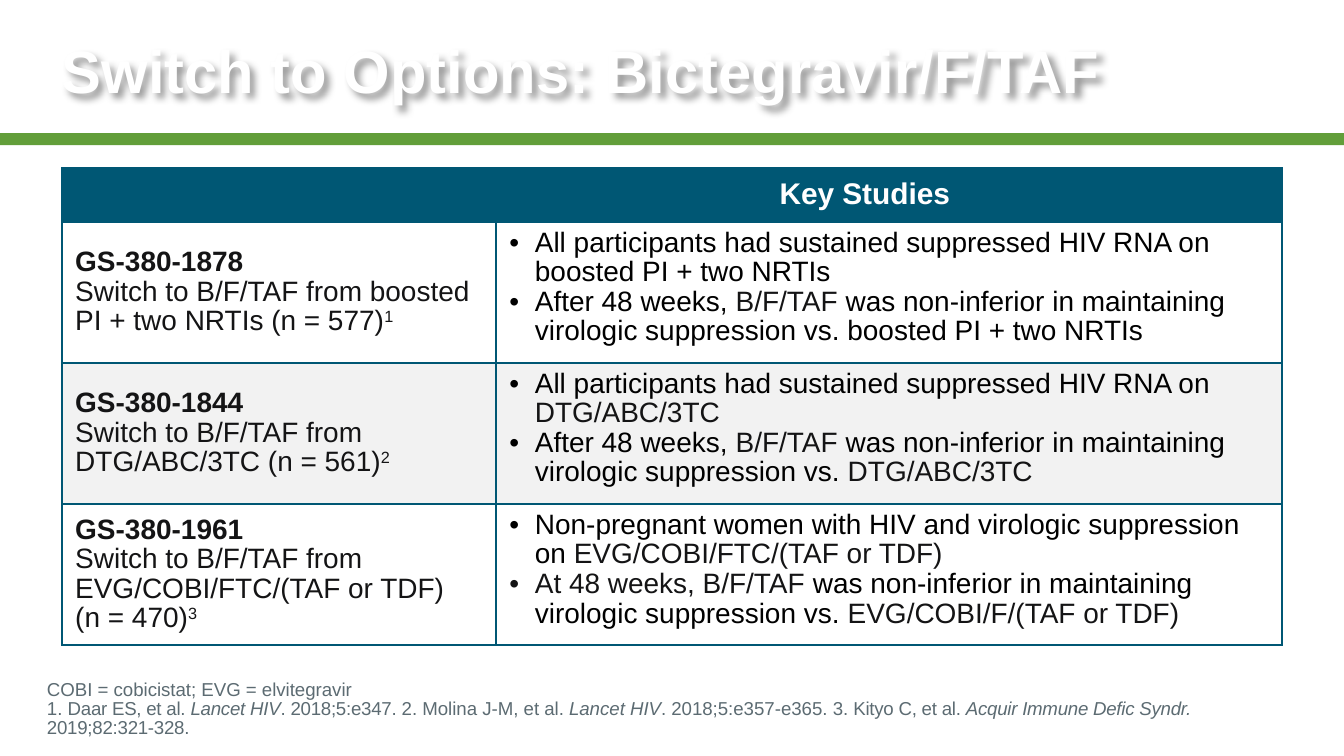
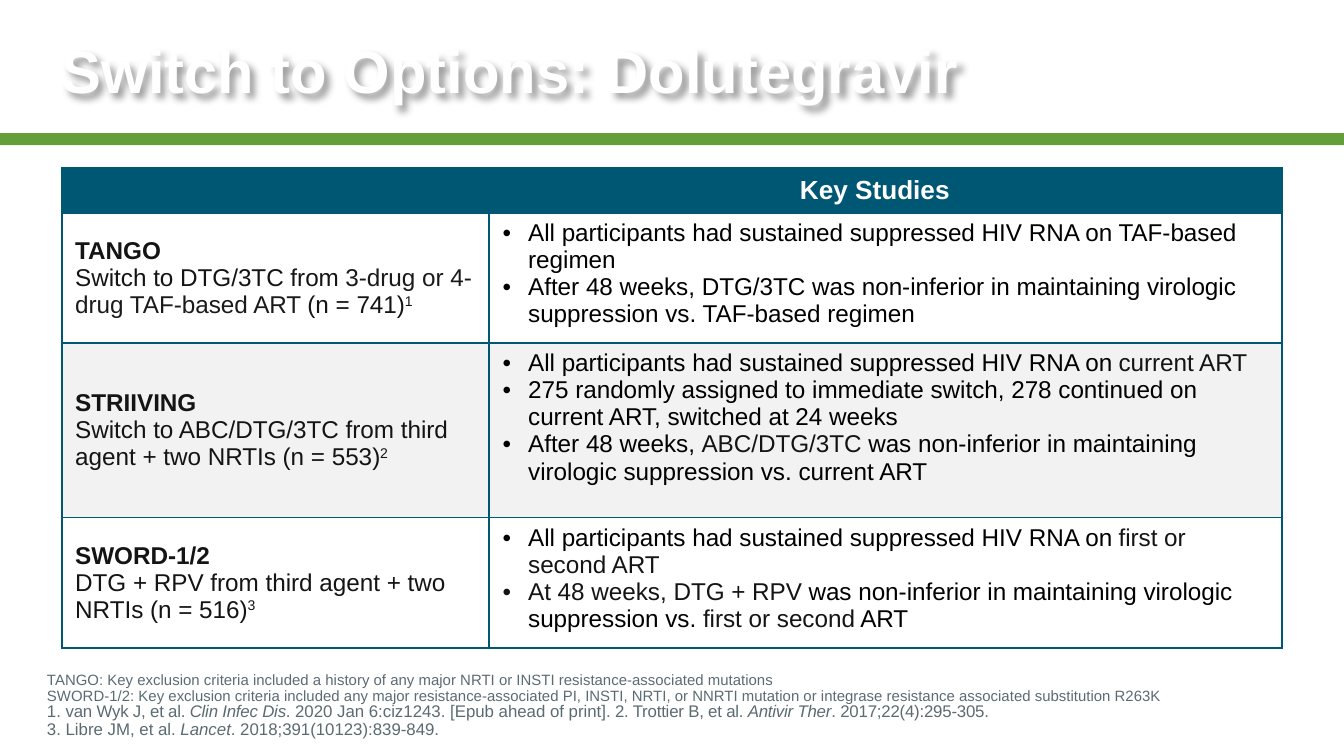
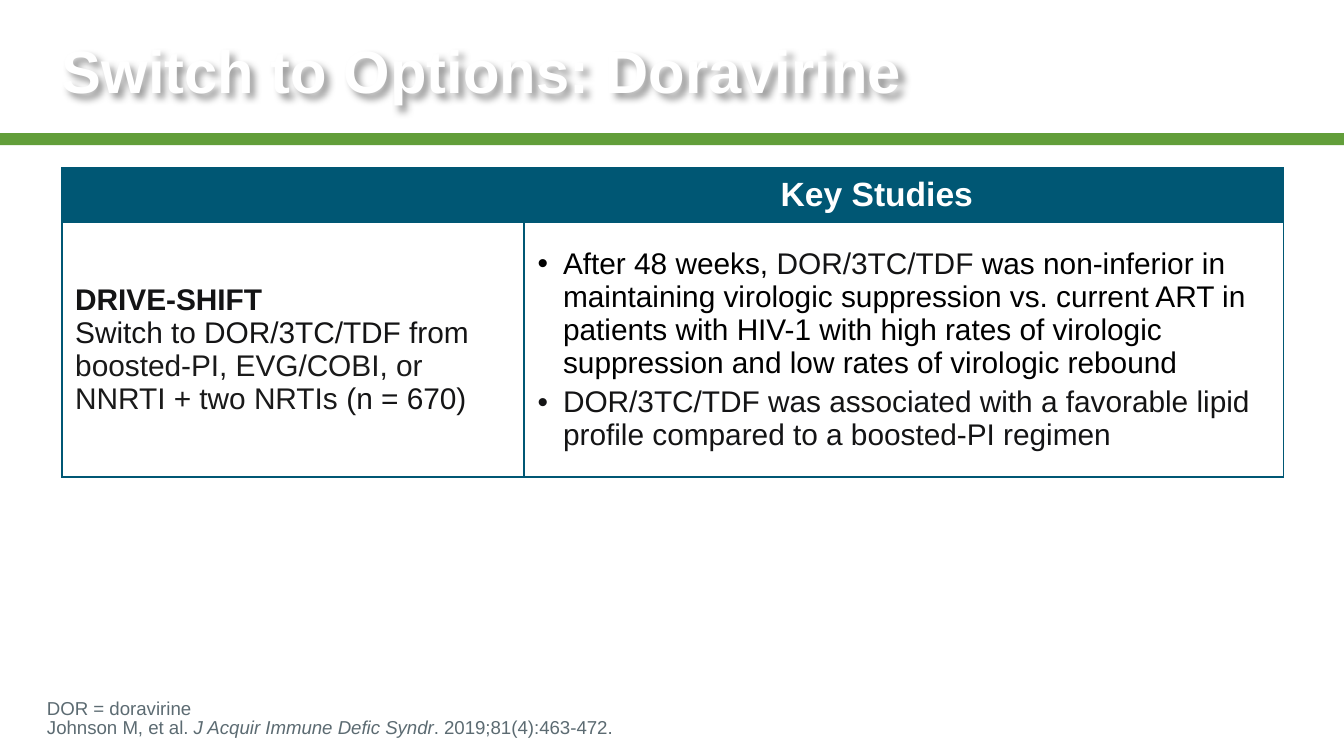
from dataclasses import dataclass

from lxml import etree
from pptx import Presentation
from pptx.dml.color import RGBColor
from pptx.enum import shapes, text
from pptx.oxml import ns
from pptx.util import Inches, Pt

FONT = "Arial"
WHITE, BLACK, INK, SOFT_INK = "FFFFFF", "000000", "141415", "1A1A1A"
TEAL, GREEN, STRIPE, SLATE = "005774", "629E3A", "F2F2F2", "5C6B72"
LEFT, CONTENT_WIDTH = 0.46, 9.09
SLIDE_WIDTH = 10
SLIDE_HEIGHT = SLIDE_WIDTH * 9 / 16
HANG = 0.19


@dataclass
class Study:
    name: str
    design: str
    reference: str
    findings: list[str]
    height: float


@dataclass
class NoteLine:
    size: float
    marked: str


@dataclass
class Regimen:
    title: str
    studies: list[Study]
    notes: list[NoteLine]
    note_height: float
    columns: tuple[float, float]
    header_height: float
    header_inset: float
    header_size: float
    body_size: float
    line_spacing: float = 1.0
    findings_anchor: text.MSO_ANCHOR = text.MSO_ANCHOR.TOP
    findings_gap: float = 0


REGIMENS = [
    Regimen(
        "Switch to Options: Bictegravir/F/TAF",
        [
            Study("GS-380-1878",
                  "Switch to B/F/TAF from boosted PI + two NRTIs (n = 577)", "1",
                  ["All participants had sustained suppressed HIV RNA on boosted PI + two NRTIs",
                   "After 48 weeks, |B/F/TAF |was non-inferior in maintaining virologic "
                   "suppression vs. boosted PI + two NRTIs"], 0.98),
            Study("GS-380-1844",
                  "Switch to B/F/TAF from DTG/ABC/3TC (n = 561)", "2",
                  ["All participants had sustained suppressed HIV RNA on |DTG/ABC/3TC",
                   "After 48 weeks, |B/F/TAF |was non-inferior in maintaining virologic "
                   "suppression vs. |DTG/ABC/3TC"], 0.98),
            Study("GS-380-1961",
                  "Switch to B/F/TAF from EVG/COBI/FTC/(TAF or TDF)\n(n = 470)", "3",
                  ["Non-pregnant women with HIV and virologic suppression on "
                   "|EVG/COBI/FTC/(TAF or TDF)",
                   "|At 48 weeks, B/F/TAF |was non-inferior in maintaining virologic "
                   "suppression vs. |EVG/COBI/F/(TAF or TDF)"], 0.98),
        ],
        [
            NoteLine(10, "COBI = cobicistat; EVG = elvitegravir"),
            NoteLine(10, "1. ~Daar ES, et al. |Lancet HIV|. 2018;5:e347. ~2. Molina J-M, et al. "
                         "|Lancet HIV|. 2018;5:e357-e365. 3. ~Kityo C, et al. "
                         "|Acquir Immune Defic Syndr."),
            NoteLine(10, "~2019;82:321-328."),
        ],
        note_height=0.56, columns=(3.23, 5.85), header_height=0.4, header_inset=2.97,
        header_size=16, body_size=15, line_spacing=0.95,
    ),
    Regimen(
        "Switch to Options: Dolutegravir",
        [
            Study("TANGO",
                  "Switch to DTG/3TC from |3-drug or 4-drug TAF-based ART |(n = 741)", "1",
                  ["All participants had sustained suppressed HIV RNA on TAF-based regimen",
                   "After 48 weeks, DTG/3TC was non-inferior in maintaining virologic "
                   "suppression vs. TAF-based regimen"], 0.91),
            Study("STRIIVING",
                  "Switch to ABC/DTG/3TC from third agent + two NRTIs (n = 553)", "2",
                  ["All participants had sustained suppressed HIV RNA on |current ART",
                   "275 randomly assigned to immediate switch, 278 continued on current ART, "
                   "switched at 24 weeks",
                   "After 48 weeks, |ABC/DTG/3TC |was non-inferior in maintaining virologic "
                   "suppression vs. current ART"], 1.3),
            Study("SWORD-1/2",
                  "DTG + RPV from third agent + two NRTIs (n = 516)", "3",
                  ["All participants had sustained suppressed HIV RNA on |first or second ART",
                   "|At 48 weeks, DTG + RPV |was non-inferior in maintaining virologic "
                   "suppression vs. |first or second| ART"], 0.91),
        ],
        [
            NoteLine(8, "TANGO: Key exclusion criteria included a history of any major NRTI or "
                        "INSTI resistance-associated mutations"),
            NoteLine(8, "SWORD-1/2: Key exclusion criteria included any major "
                        "resistance-associated PI, INSTI, NRTI, or NNRTI mutation or integrase "
                        "resistance associated substitution R263K"),
            NoteLine(9, "1. ~van Wyk J, et al. |Clin Infec Dis|. ~2020 Jan 6:ciz1243. [Epub "
                        "ahead of print]~. 2. Trottier B, et al. |Antivir Ther|. "
                        "2017;22(4):295-305."),
            NoteLine(9, "3. Libre JM, et al. |Lancet|. 2018;391(10123):839-849."),
        ],
        note_height=0.62, columns=(3.18, 5.9), header_height=0.32, header_inset=3.12,
        header_size=14, body_size=13,
    ),
    Regimen(
        "Switch to Options: Doravirine",
        [
            Study("DRIVE-SHIFT",
                  "Switch to DOR/3TC/TDF from |boosted-PI, EVG/COBI, or NNRTI + two NRTIs "
                  "|(n = 670)", "",
                  ["After 48 weeks, |DOR/3TC/TDF |was non-inferior in maintaining virologic "
                   "suppression vs. current ART in patients with HIV-1 with high rates of "
                   "virologic suppression and low rates of virologic rebound",
                   "|DOR/3TC/TDF was associated with a favorable lipid profile compared to a "
                   "boosted-PI regimen"], 1.9),
        ],
        [
            NoteLine(10, "DOR = doravirine"),
            NoteLine(10, "Johnson M, et al. |J Acquir Immune Defic Syndr|. 2019;81(4):463-472."),
        ],
        note_height=0.42, columns=(3.44, 5.65), header_height=0.38, header_inset=3.14,
        header_size=18, body_size=16,
        findings_anchor=text.MSO_ANCHOR.MIDDLE, findings_gap=3,
    ),
]


def rgb(value: str) -> RGBColor:
    return RGBColor.from_string(value)


def add_xml(parent, tag: str, **attributes):
    return etree.SubElement(parent, ns.qn(tag), attributes)


def set_font(paragraph, size: float, color: str, bold: bool = False) -> None:
    font = paragraph.font
    font.name, font.size, font.bold = FONT, Pt(size), bold
    font.color.rgb = rgb(color)


def add_runs(paragraph, marked: str, accent: str = "") -> None:
    for index, piece in enumerate(marked.split("|")):
        for line_number, line in enumerate(piece.split("\n")):
            if line_number:
                paragraph.add_line_break()
            if line:
                run = paragraph.add_run()
                run.text = line
                if accent and index % 2:
                    run.font.color.rgb = rgb(accent)


def add_citation(paragraph, line: NoteLine) -> None:
    for spacing_index, stretch in enumerate(line.marked.split("~")):
        for index, piece in enumerate(stretch.split("|")):
            if not piece:
                continue
            run = paragraph.add_run()
            run.text = piece
            run.font.size = Pt(line.size)
            if index % 2:
                run.font.italic = True
            if spacing_index % 2:
                run.font._element.set("spc", "-10")


def add_bullet(paragraph) -> None:
    properties = paragraph._p.get_or_add_pPr()
    properties.set("marL", str(Inches(HANG)))
    properties.set("indent", str(-Inches(HANG)))
    add_xml(properties, "a:buFont", typeface=FONT)
    add_xml(properties, "a:buChar", char="•")


def add_box(slide, left: float, top: float, width: float, height: float,
            margins: tuple[float, float, float, float], anchor: text.MSO_ANCHOR):
    box = slide.shapes.add_textbox(Inches(left), Inches(top), Inches(width), Inches(height))
    frame = box.text_frame
    frame.word_wrap = True
    frame.auto_size = text.MSO_AUTO_SIZE.SHAPE_TO_FIT_TEXT
    frame.vertical_anchor = anchor
    frame.margin_left, frame.margin_top, frame.margin_right, frame.margin_bottom = map(
        Inches, margins)
    frame.paragraphs[0].line_spacing = 0.85
    return box


def add_band(slide) -> None:
    band = slide.shapes.add_shape(shapes.MSO_SHAPE.RECTANGLE, 0, Inches(0.99),
                                  Inches(SLIDE_WIDTH), Inches(0.09))
    band.shadow.inherit = False
    band.fill.solid()
    band.fill.fore_color.rgb = rgb(GREEN)
    band.line.fill.background()


def add_title(slide, title: str) -> None:
    box = add_box(slide, LEFT, 0.28, CONTENT_WIDTH, 0.56, (0, 0.05, 0.1, 0.05),
                  text.MSO_ANCHOR.MIDDLE)
    effects = add_xml(box._element.spPr, "a:effectLst")
    shadow = add_xml(effects, "a:outerShdw", blurRad=str(Pt(4)), dist=str(Pt(3)),
                     dir="2700000", algn="tl", rotWithShape="0")
    add_xml(add_xml(shadow, "a:srgbClr", val=BLACK), "a:alpha", val="40000")
    heading = box.text_frame.paragraphs[0]
    set_font(heading, 32, WHITE, bold=True)
    add_runs(heading, title)


def style_cell(cell, fill: str, anchor: text.MSO_ANCHOR) -> None:
    properties = cell._tc.get_or_add_tcPr()
    for side in ("a:lnL", "a:lnR", "a:lnT", "a:lnB"):
        border = add_xml(properties, side, w=str(Pt(1)))
        add_xml(add_xml(border, "a:solidFill"), "a:srgbClr", val=TEAL)
    cell.fill.solid()
    cell.fill.fore_color.rgb = rgb(fill)
    cell.vertical_anchor = anchor


def fill_study(cell, study: Study, regimen: Regimen) -> None:
    frame = cell.text_frame
    name, design = frame.paragraphs[0], frame.add_paragraph()
    for paragraph, marked in ((name, study.name), (design, study.design)):
        paragraph.line_spacing = regimen.line_spacing
        set_font(paragraph, regimen.body_size, INK, bold=paragraph is name)
        add_runs(paragraph, marked, accent=SOFT_INK)
    if study.reference:
        reference = design.add_run()
        reference.text = study.reference
        reference.font._element.set("baseline", "30000")


def fill_findings(cell, study: Study, regimen: Regimen) -> None:
    frame = cell.text_frame
    for index, finding in enumerate(study.findings):
        paragraph = frame.add_paragraph() if index else frame.paragraphs[0]
        paragraph.line_spacing = regimen.line_spacing
        paragraph.space_after = Pt(regimen.findings_gap)
        add_bullet(paragraph)
        set_font(paragraph, regimen.body_size, BLACK)
        add_runs(paragraph, finding, accent=INK)


def add_studies(slide, regimen: Regimen) -> None:
    heights = [regimen.header_height] + [study.height for study in regimen.studies]
    table = slide.shapes.add_table(len(heights), 2, Inches(LEFT), Inches(1.25),
                                   Inches(CONTENT_WIDTH), Inches(sum(heights))).table
    table.first_row = table.horz_banding = False
    for column, width in zip(table.columns, regimen.columns):
        column.width = Inches(width)
    for row, height in zip(table.rows, heights):
        row.height = Inches(height)

    header = table.cell(0, 0)
    header.merge(table.cell(0, 1))
    for cell in table.rows[0].cells:
        style_cell(cell, TEAL, text.MSO_ANCHOR.MIDDLE)
    header.margin_left = Inches(regimen.header_inset)
    heading = header.text_frame.paragraphs[0]
    heading.alignment = text.PP_ALIGN.CENTER
    heading.line_spacing = regimen.line_spacing
    set_font(heading, regimen.header_size, WHITE, bold=True)
    add_runs(heading, "Key Studies")

    for index, study in enumerate(regimen.studies):
        fill = STRIPE if index % 2 else WHITE
        design, findings = table.rows[index + 1].cells
        style_cell(design, fill, text.MSO_ANCHOR.MIDDLE)
        style_cell(findings, fill, regimen.findings_anchor)
        fill_study(design, study, regimen)
        fill_findings(findings, study, regimen)


def add_notes(slide, regimen: Regimen) -> None:
    box = add_box(slide, 0, SLIDE_HEIGHT - regimen.note_height, SLIDE_WIDTH,
                  regimen.note_height, (0.35, 0, 0, 0.13), text.MSO_ANCHOR.BOTTOM)
    citation = box.text_frame.paragraphs[0]
    set_font(citation, regimen.notes[0].size, SLATE)
    for index, line in enumerate(regimen.notes):
        if index:
            citation.add_line_break()
        add_citation(citation, line)


def main() -> None:
    deck = Presentation()
    deck.slide_width, deck.slide_height = Inches(SLIDE_WIDTH), Inches(SLIDE_HEIGHT)
    for regimen in REGIMENS:
        slide = deck.slides.add_slide(deck.slide_layouts[6])
        add_band(slide)
        add_title(slide, regimen.title)
        add_studies(slide, regimen)
        add_notes(slide, regimen)
    deck.save("out.pptx")


if __name__ == "__main__":
    main()
